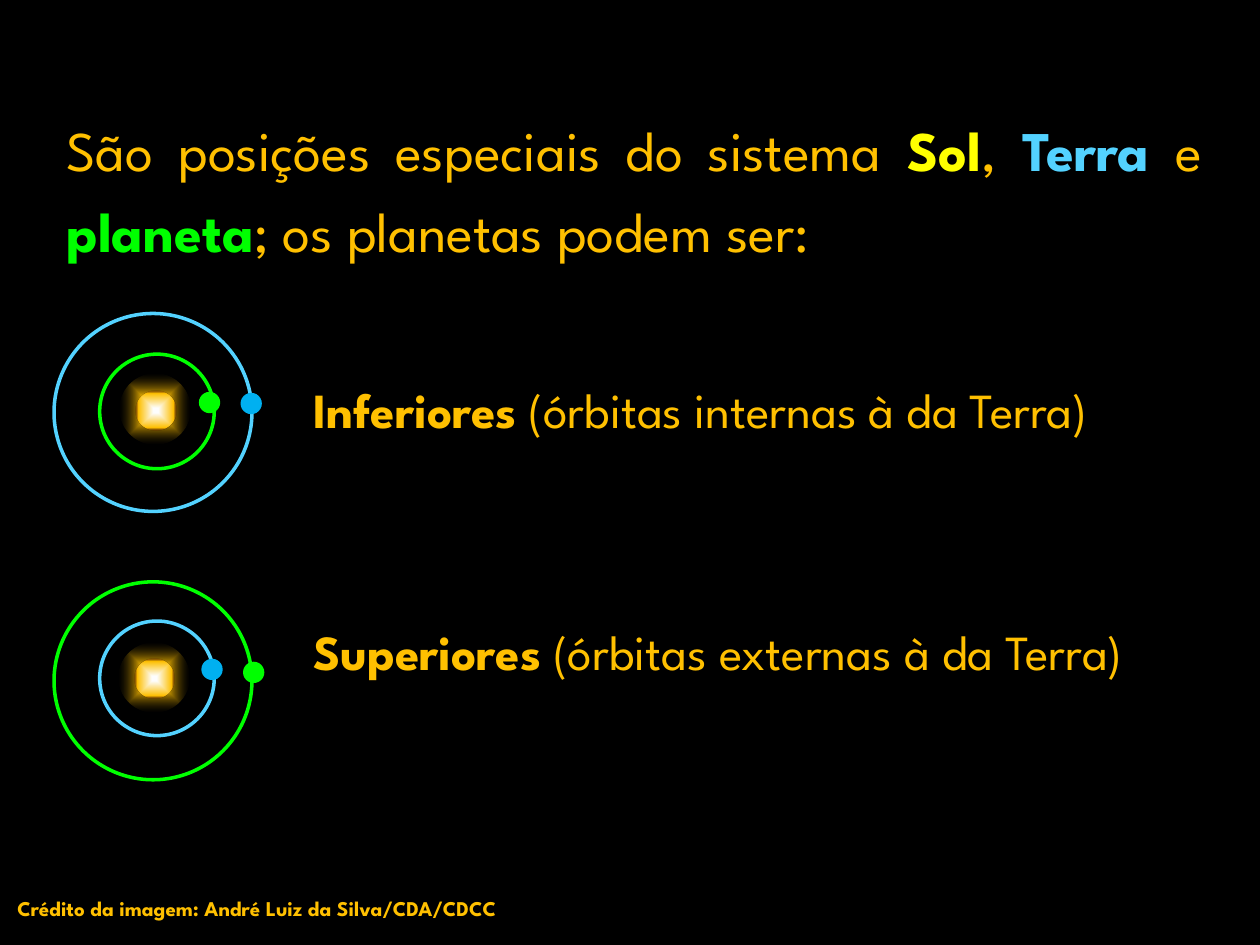
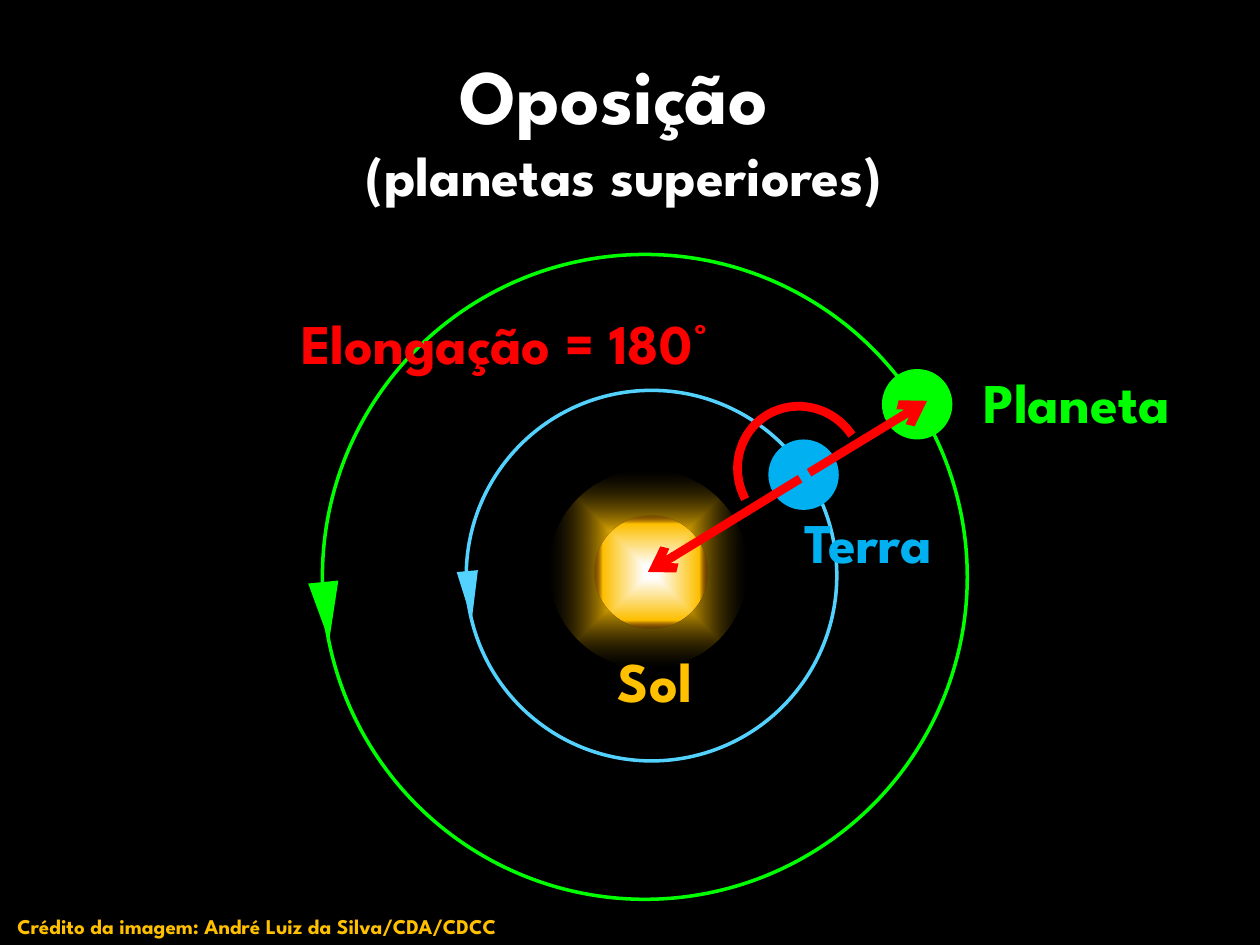
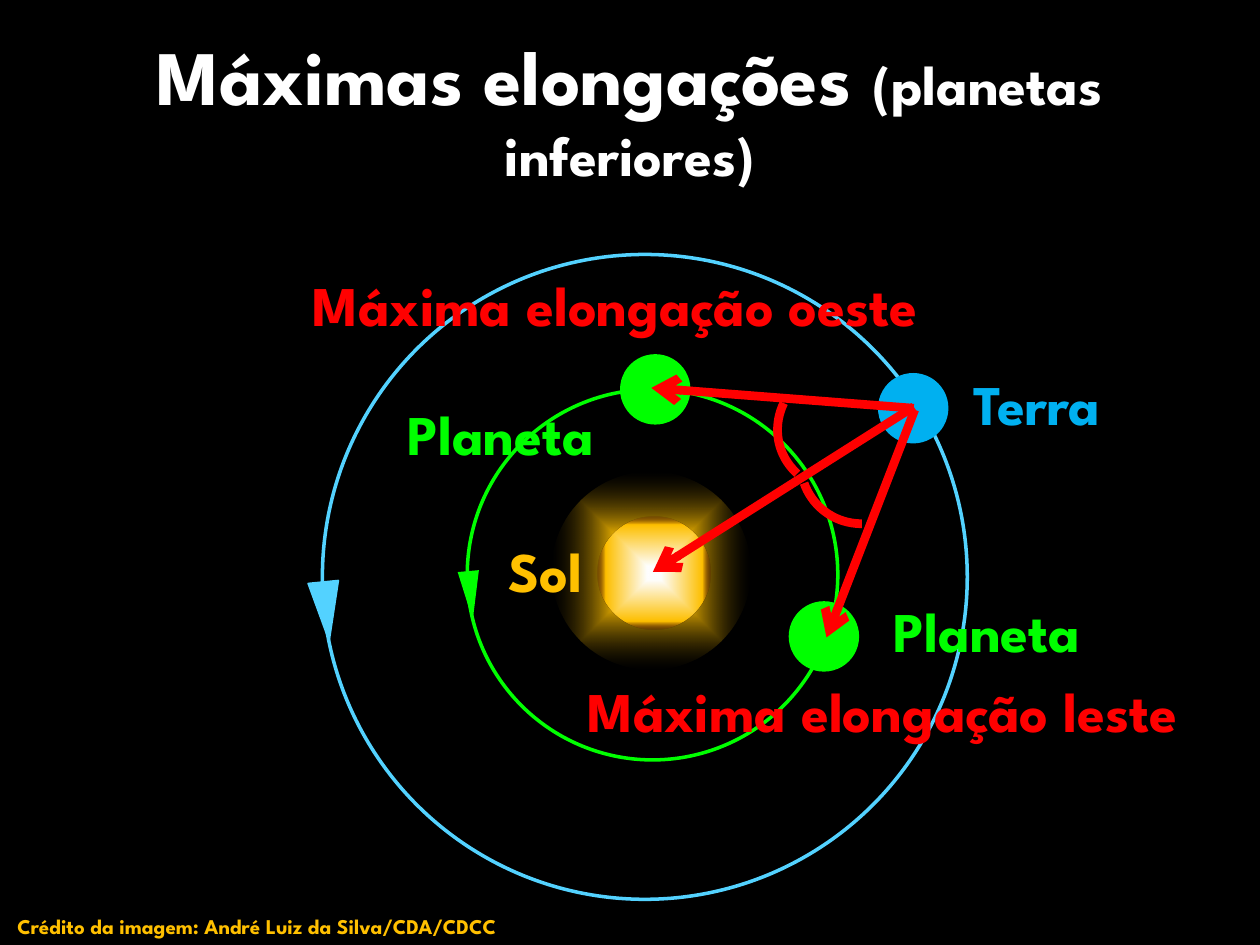
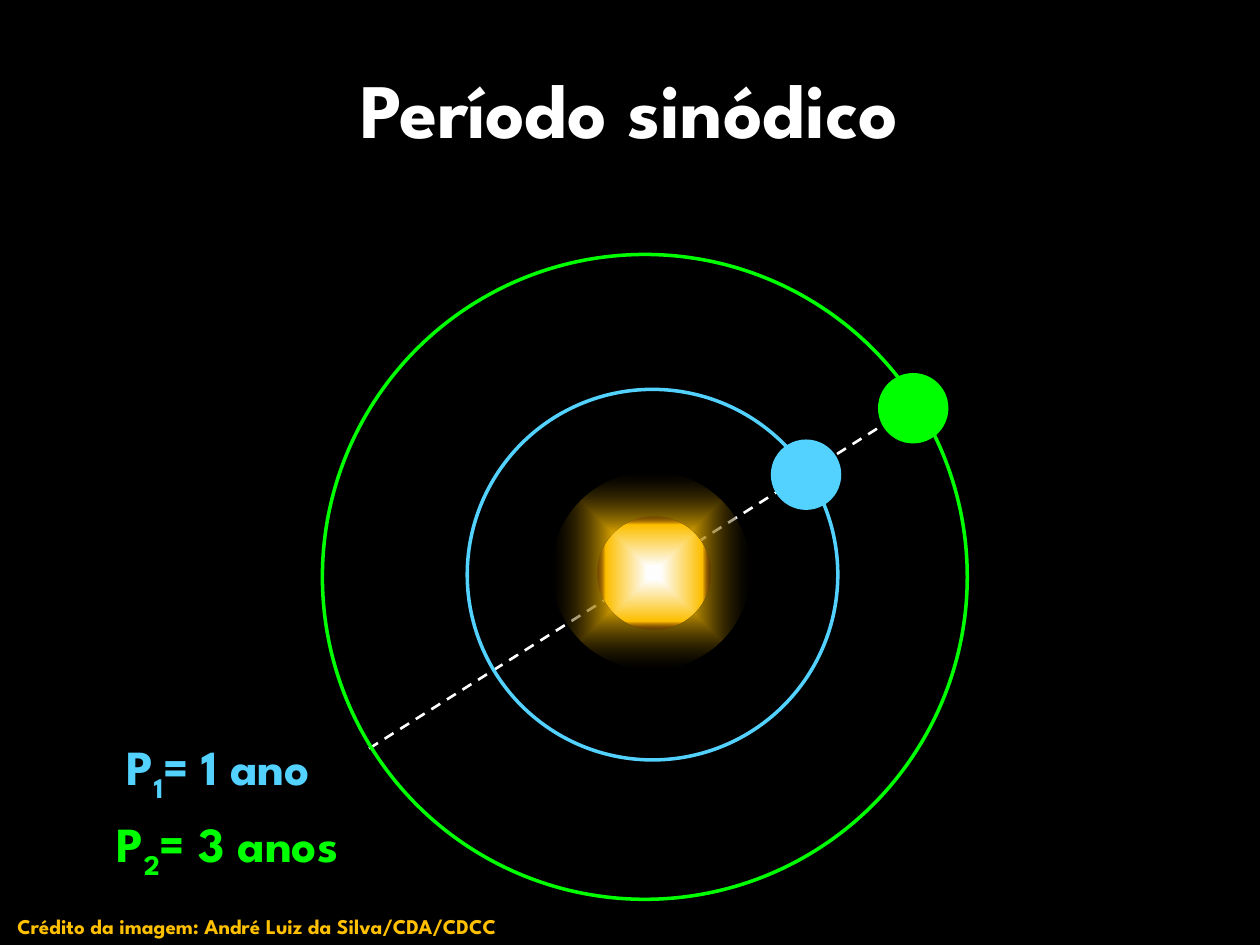
from dataclasses import dataclass
from typing import Optional

from pptx import Presentation
from pptx.dml.color import RGBColor
from pptx.enum.dml import MSO_LINE
from pptx.enum.shapes import MSO_CONNECTOR, MSO_SHAPE
from pptx.enum.text import MSO_ANCHOR, MSO_AUTO_SIZE, PP_ALIGN
from pptx.oxml import parse_xml
from pptx.oxml.ns import nsdecls, qn
from pptx.util import Cm, Pt

FONT = "League Spartan"
BLACK, WHITE, RED = "000000", "FFFFFF", "FF0000"
GOLD, YELLOW, GREEN = "FFC000", "FFFF00", "00FF00"
SKY, BLUE, MAROON = "53D2FF", "00B0F0", "4D0808"
CREDIT = "Crédito da imagem: André Luiz da Silva/CDA/CDCC"

HALO_STOPS = ((7, WHITE, 100), (32, GOLD, 100), (100, BLACK, 23))
CORE_STOPS = ((12, WHITE, 100), (85, GOLD, 100), (100, MAROON, 17))


@dataclass(frozen=True)
class Figure:
    """A preset outline with its place in centimetres and its paint."""
    kind: MSO_SHAPE
    left: float
    top: float
    width: float
    height: float
    fill: Optional[str] = None
    line: Optional[str] = None
    weight: float = 2
    rotation: float = 0
    span: tuple = ()


@dataclass(frozen=True)
class Words:
    """A run of text; a text of one line feed is a line break."""
    text: str
    color: str
    size: float = 32
    bold: bool = True
    baseline: int = 0


@dataclass(frozen=True)
class Ray:
    """A straight line between two points in centimetres."""
    start: tuple
    end: tuple
    color: str = RED
    weight: float = 5
    arrow: bool = True


def rgb(code: str) -> RGBColor:
    """Turn a hex string into a colour."""
    return RGBColor.from_string(code)


def orbit(left: float, top: float, size: float, color: str) -> Figure:
    """Describe a circular orbit."""
    return Figure(MSO_SHAPE.OVAL, left, top, size, size, line=color)


def body(left: float, top: float, color: str, size: float = 1.42) -> Figure:
    """Describe a planet."""
    return Figure(MSO_SHAPE.OVAL, left, top, size, size, fill=color)


def angle(left: float, top: float, height: float, rotation: float, span: tuple) -> Figure:
    """Describe the arc that marks an elongation."""
    return Figure(MSO_SHAPE.ARC, left, top, 2.51, height, line=RED, weight=5,
                  rotation=rotation, span=span)


def outer_direction(color: str, line: Optional[str] = None) -> Figure:
    """Describe the direction mark on the outer orbit."""
    return Figure(MSO_SHAPE.ISOSCELES_TRIANGLE, 6.27, 11.73, 0.61, 1.19,
                  fill=color, line=line, weight=1, rotation=174.3)


def inner_direction(color: str, left: float) -> Figure:
    """Describe the direction mark on the inner orbit."""
    return Figure(MSO_SHAPE.ISOSCELES_TRIANGLE, left, 11.51, 0.43, 0.99,
                  fill=color, rotation=174.8)


def sight_line(start: tuple, end: tuple) -> Ray:
    """Describe a dashed line through Sun and planets."""
    return Ray(start, end, WHITE, 1.5, arrow=False)


def draw_figure(shapes, figure: Figure):
    """Draw one figure and return it."""
    shape = shapes.add_shape(figure.kind, Cm(figure.left), Cm(figure.top),
                             Cm(figure.width), Cm(figure.height))
    shape.shadow.inherit = False
    shape.rotation = figure.rotation
    for index, value in enumerate(figure.span):
        shape.adjustments[index] = value
    if figure.fill:
        shape.fill.solid()
        shape.fill.fore_color.rgb = rgb(figure.fill)
    else:
        shape.fill.background()
    if figure.line:
        shape.line.color.rgb = rgb(figure.line)
        shape.line.width = Pt(figure.weight)
    else:
        shape.line.fill.background()
    return shape


def draw_figures(slide, *figures: Figure) -> None:
    """Draw figures from back to front."""
    for figure in figures:
        draw_figure(slide.shapes, figure)


def glow(shape, stops: tuple) -> None:
    """Fill a shape with a gradient that runs out from its centre."""
    marks = "".join(
        f'<a:gs pos="{place * 1000}"><a:srgbClr val="{color}">'
        f'<a:alpha val="{alpha * 1000}"/></a:srgbClr></a:gs>'
        for place, color, alpha in stops)
    shape.fill.gradient()
    plain = shape._element.spPr.find(qn("a:gradFill"))
    plain.getparent().replace(plain, parse_xml(
        f'<a:gradFill {nsdecls("a")} rotWithShape="1"><a:gsLst>{marks}</a:gsLst>'
        '<a:path path="shape"><a:fillToRect l="50000" t="50000" r="50000" b="50000"/>'
        '</a:path></a:gradFill>'))


def draw_sun(slide, left: float, top: float, size: float = 4.0) -> None:
    """Draw the Sun as a grouped halo and core."""
    sun = slide.shapes.add_group_shape()
    inset = 0.23 * size
    glow(draw_figure(sun.shapes, body(left, top, GOLD, size)), HALO_STOPS)
    glow(draw_figure(sun.shapes, body(left + inset, top + inset, GOLD, 0.57 * size)), CORE_STOPS)


def draw_rays(slide, *rays: Ray) -> None:
    """Draw straight lines, dashed or with an arrowhead."""
    for ray in rays:
        ends = [Cm(value) for value in (*ray.start, *ray.end)]
        connector = slide.shapes.add_connector(MSO_CONNECTOR.STRAIGHT, *ends)
        connector.line.color.rgb = rgb(ray.color)
        connector.line.width = Pt(ray.weight)
        if ray.arrow:
            connector.line._get_or_add_ln().append(
                parse_xml(f'<a:tailEnd {nsdecls("a")} type="arrow"/>'))
        else:
            connector.line.dash_style = MSO_LINE.DASH
        connector._element.spPr.append(parse_xml(f'<a:effectLst {nsdecls("a")}/>'))


def write(paragraph, *words: Words) -> None:
    """Add text to a paragraph run by run."""
    for part in words:
        if part.text == "\n":
            paragraph.add_line_break()
            continue
        run = paragraph.add_run()
        run.text = part.text
        run.font.name = FONT
        run.font.size = Pt(part.size)
        run.font.bold = part.bold
        run.font.color.rgb = rgb(part.color)
        if part.baseline:
            run.font._element.set("baseline", str(part.baseline * 1000))


def text_frame(slide, left: float, top: float, width: float, height: float):
    """Add a wrapping text box and return its frame."""
    frame = slide.shapes.add_textbox(Cm(left), Cm(top), Cm(width), Cm(height)).text_frame
    frame.word_wrap = True
    return frame


def draw_label(slide, left: float, top: float, width: float, *words: Words,
               height: float = 1.63, align: PP_ALIGN = PP_ALIGN.CENTER) -> None:
    """Draw a one-line label."""
    frame = text_frame(slide, left, top, width, height)
    frame.auto_size = MSO_AUTO_SIZE.SHAPE_TO_FIT_TEXT
    frame.paragraphs[0].alignment = align
    write(frame.paragraphs[0], *words)


def draw_title(slide, *words: Words, left: float = 1.9, top: float = 0.13,
               width: float = 21.59) -> None:
    """Draw the slide title."""
    frame = text_frame(slide, left, top, width, 4.09)
    frame.vertical_anchor = MSO_ANCHOR.MIDDLE
    frame.paragraphs[0].alignment = PP_ALIGN.CENTER
    write(frame.paragraphs[0], *words)


def draw_credit(slide, top: float = 18.29) -> None:
    """Draw the image credit at the foot."""
    draw_label(slide, 0.1, top, 13.41, Words(CREDIT, GOLD, 12), height=0.76,
               align=PP_ALIGN.LEFT)


def draw_orbits(slide, outer: str, inner: str, left: float = 9.42, top: float = 7.85) -> None:
    """Draw the two large orbits."""
    draw_figures(slide, orbit(6.5, 5.13, 13.0, outer), orbit(left, top, 7.47, inner))


def draw_kinds_of_planets(slide) -> None:
    """Introduce inferior and superior planets."""
    frame = text_frame(slide, 1.09, 1.93, 23.39, 14.81)
    intro = frame.paragraphs[0]
    write(intro,
          Words("São posições especiais do sistema ", GOLD, bold=False),
          Words("Sol", YELLOW), Words(", ", GOLD, bold=False),
          Words("Terra ", SKY), Words("e ", GOLD, bold=False),
          Words("planeta", GREEN), Words("; os planetas podem ser:", GOLD, bold=False))
    for kind, meaning, gap in (("Inferiores", " (órbitas internas à da Terra)", 60),
                               ("Superiores", " (órbitas externas à da Terra)", 97.4)):
        entry = frame.add_paragraph()
        entry.space_before = Pt(gap)
        entry._p.get_or_add_pPr().set("marL", str(Cm(4.98)))
        write(entry, Words(kind, GOLD, 28), Words(meaning, GOLD, 28, bold=False))
    for paragraph in frame.paragraphs:
        paragraph.alignment = PP_ALIGN.JUSTIFY
        paragraph.line_spacing = 1.2

    draw_figures(
        slide,
        orbit(1.09, 6.32, 3.99, SKY), orbit(2.01, 7.14, 2.31, GREEN),
        body(4.01, 7.9, GREEN, 0.43), body(4.85, 7.92, BLUE, 0.43),
        orbit(1.09, 11.73, 3.99, GREEN), orbit(2.01, 12.52, 2.31, SKY),
        body(4.06, 13.28, BLUE, 0.43), body(4.9, 13.34, GREEN, 0.43))
    draw_credit(slide, 17.93)
    draw_sun(slide, 2.41, 7.54, 1.42)
    draw_sun(slide, 2.39, 12.95, 1.42)


def draw_opposition(slide) -> None:
    """Show a superior planet in opposition."""
    draw_rays(slide, sight_line((13.11, 11.53), (18.49, 8.13)))
    draw_title(slide, Words("Oposição ", WHITE, 44), Words("\n", WHITE),
               Words("(planetas superiores)", WHITE), left=0.89, top=0.53, width=23.39)
    draw_orbits(slide, GREEN, SKY, 9.4, 7.87)
    draw_figures(slide, body(15.49, 8.86, BLUE), body(17.78, 7.44, GREEN))
    draw_sun(slide, 11.07, 9.47)
    draw_label(slide, 11.91, 12.9, 2.59, Words("Sol", GOLD))
    draw_label(slide, 15.7, 10.11, 3.61, Words("Terra", BLUE))
    draw_label(slide, 19.1, 7.29, 5.21, Words("Planeta", GREEN))
    draw_rays(slide, Ray((16.13, 9.65), (13.06, 11.53)))
    draw_figures(slide, angle(14.88, 8.18, 2.59, 328.7, (110.05, 214.33)))
    draw_rays(slide, Ray((16.31, 9.53), (18.69, 8.08)))
    draw_label(slide, 4.9, 6.1, 10.59, Words("Elongação = 180°", RED))
    draw_figures(slide, outer_direction(GREEN), inner_direction(SKY, 9.25))
    draw_credit(slide)


def draw_greatest_elongations(slide) -> None:
    """Show an inferior planet at both greatest elongations."""
    draw_title(slide, Words("Máximas elongações ", WHITE, 44),
               Words("(planetas inferiores)", WHITE))
    draw_orbits(slide, SKY, GREEN)
    draw_figures(slide, body(17.7, 7.52, BLUE))
    draw_sun(slide, 11.13, 9.5)
    draw_label(slide, 3.91, 5.33, 16.99, Words("Máxima elongação oeste", RED))
    draw_label(slide, 9.3, 13.51, 16.99, Words("Máxima elongação leste", RED))
    draw_figures(slide, body(12.5, 7.14, GREEN), body(15.9, 12.12, GREEN))
    draw_label(slide, 9.7, 10.69, 2.59, Words("Sol", GOLD))
    draw_label(slide, 19.1, 7.32, 3.61, Words("Terra", BLUE))
    for left, top in ((17.3, 11.91), (7.49, 7.92)):
        draw_label(slide, left, top, 5.21, Words("Planeta", GREEN))
    draw_figures(slide, outer_direction(SKY, SKY))
    draw_rays(slide, Ray((18.42, 8.2), (13.16, 11.53)))
    draw_figures(slide, angle(15.75, 7.29, 2.67, 256.4, (143.39, 183.69)))
    draw_rays(slide, Ray((18.42, 8.23), (13.13, 7.82)), Ray((18.44, 8.26), (16.66, 12.85)))
    draw_figures(slide, angle(16.15, 7.98, 2.59, 216, (141.22, 181.69)),
                 inner_direction(GREEN, 9.27))
    draw_credit(slide)


def draw_synodic_period(slide) -> None:
    """Show two aligned planets and their periods."""
    draw_title(slide, Words("Período sinódico", WHITE, 44))
    for left, top, number, period, color in ((0.71, 14.73, "1", "= 1 ano", SKY),
                                             (0.89, 16.28, "2", "= 3 anos", GREEN)):
        draw_label(slide, left, top, 7.39, Words("P", color, 28),
                   Words(number, color, 28, baseline=-25), Words(period, color, 28),
                   height=1.45)
    draw_credit(slide)
    draw_rays(slide, sight_line((7.44, 15.09), (12.85, 11.68)),
              sight_line((13.11, 11.53), (18.49, 8.13)))
    draw_orbits(slide, GREEN, SKY)
    draw_figures(slide, body(15.54, 8.86, SKY), body(17.7, 7.52, GREEN))
    draw_sun(slide, 11.13, 9.5)


def main() -> None:
    """Build the presentation."""
    deck = Presentation()
    deck.slide_width, deck.slide_height = Cm(25.4), Cm(19.05)
    sky = deck.slide_master.background.fill
    sky.solid()
    sky.fore_color.rgb = rgb(BLACK)
    for draw in (draw_kinds_of_planets, draw_opposition,
                 draw_greatest_elongations, draw_synodic_period):
        draw(deck.slides.add_slide(deck.slide_layouts[6]))
    deck.save("out.pptx")


if __name__ == "__main__":
    main()
